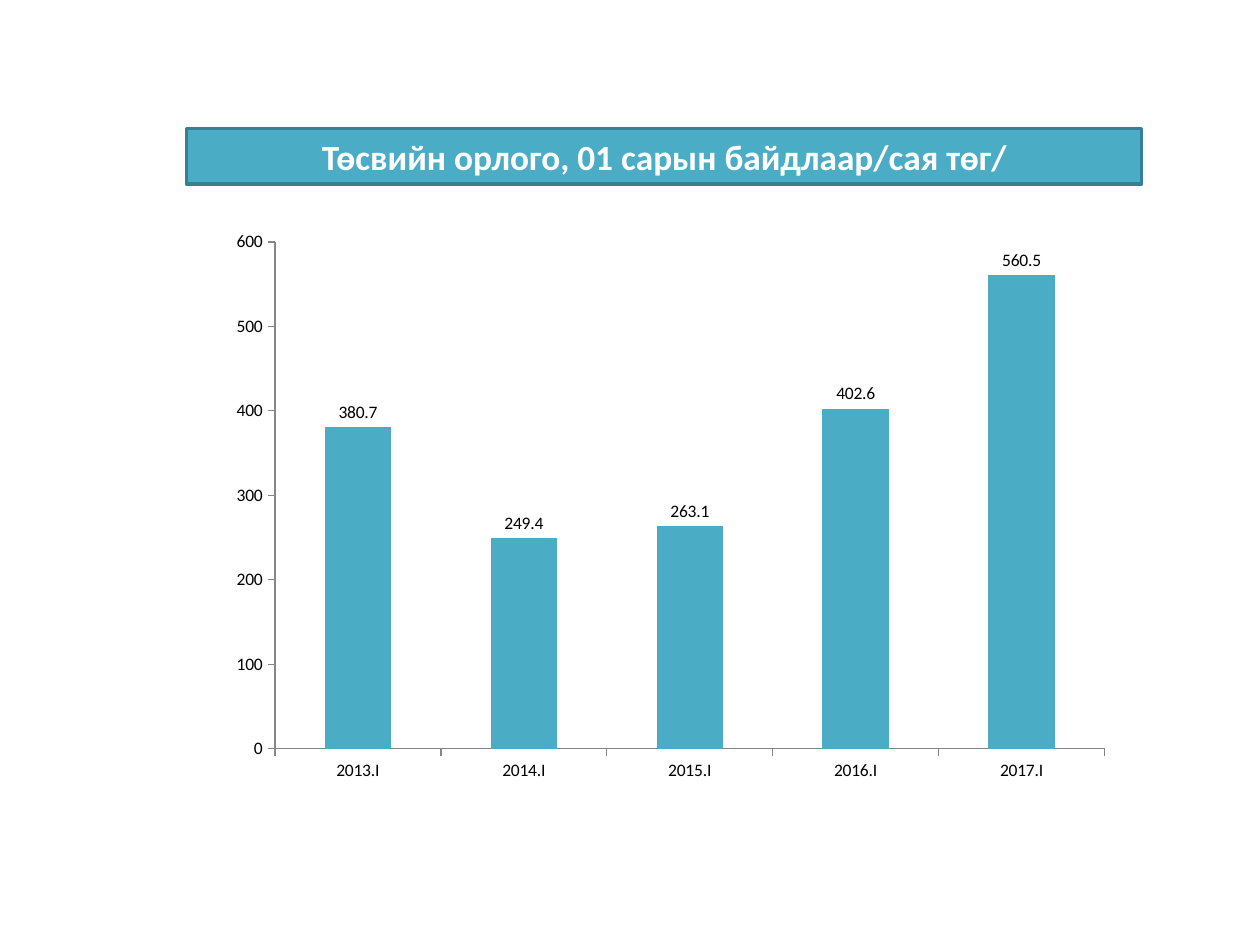
import pptx
import pptx.chart.data
import pptx.dml.color
import pptx.enum.chart
import pptx.enum.text
import pptx.oxml
import pptx.oxml.ns
import pptx.util
from pptx.dml.color import RGBColor
from pptx.util import Inches

TEAL = RGBColor(0x4B, 0xAC, 0xC6)
DARK_TEAL = RGBColor(0x37, 0x7F, 0x92)
WHITE = RGBColor(0xFF, 0xFF, 0xFF)
BLACK = RGBColor(0, 0, 0)
GREY = RGBColor(0x86, 0x86, 0x86)
FONT = "Calibri"

REVENUE = {
    "2013.I": 380.7,
    "2014.I": 249.4,
    "2015.I": 263.1,
    "2016.I": 402.6,
    "2017.I": 560.5,
}


def format_font(font, size, color, bold=False):
    font.name = FONT
    font.size = pptx.util.Pt(size)
    font.bold = bold
    font.color.rgb = color


def write_text(shape, text, size, color, bold=False, align=pptx.enum.text.PP_ALIGN.CENTER):
    frame = shape.text_frame
    frame.word_wrap = True
    frame.vertical_anchor = pptx.enum.text.MSO_ANCHOR.MIDDLE
    frame.auto_size = pptx.enum.text.MSO_AUTO_SIZE.NONE
    frame.margin_left = frame.margin_right = Inches(0.1)
    frame.margin_top = frame.margin_bottom = Inches(0.05)
    paragraph = frame.paragraphs[0]
    paragraph.alignment = align
    run = paragraph.add_run()
    run.text = text
    format_font(run.font, size, color, bold)


def add_title(slide, text):
    title = slide.shapes.title
    title.left, title.top = Inches(1.48), Inches(1.02)
    title.width, title.height = Inches(7.58), Inches(0.44)
    title.fill.solid()
    title.fill.fore_color.rgb = TEAL
    title.line.color.rgb = DARK_TEAL
    title.line.width = pptx.util.Pt(2)
    write_text(title, text, size=20.2, color=WHITE, bold=True)


def place_plot(chart, left, top, width, height):
    plot_area = chart.plots[0]._element.getparent()
    for layout in plot_area.findall(pptx.oxml.ns.qn("c:layout")):
        plot_area.remove(layout)
    sizes = "".join(
        f'<c:{name} val="{value}"/>'
        for name, value in (("x", left), ("y", top), ("w", width), ("h", height))
    )
    plot_area.insert(0, pptx.oxml.parse_xml(
        f'<c:layout {pptx.oxml.ns.nsdecls("c")}><c:manualLayout>'
        '<c:layoutTarget val="inner"/><c:xMode val="edge"/><c:yMode val="edge"/>'
        f"{sizes}</c:manualLayout></c:layout>"
    ))


def format_axis(axis):
    axis.has_major_gridlines = False
    axis.major_tick_mark = pptx.enum.chart.XL_TICK_MARK.OUTSIDE
    axis.minor_tick_mark = pptx.enum.chart.XL_TICK_MARK.NONE
    axis.format.line.color.rgb = GREY
    axis.format.line.width = pptx.util.Pt(0.75)
    format_font(axis.tick_labels.font, 10, BLACK)


def add_revenue_chart(slide):
    data = pptx.chart.data.CategoryChartData()
    data.categories = list(REVENUE)
    data.add_series("Series 1", list(REVENUE.values()))
    chart = slide.shapes.add_chart(
        pptx.enum.chart.XL_CHART_TYPE.COLUMN_CLUSTERED,
        Inches(1.54), Inches(1.78), Inches(7.56), Inches(5.04), data,
    ).chart
    chart.has_legend = False
    chart.has_title = False
    format_font(chart.font, 10, BLACK)
    place_plot(chart, 0.085, 0.028, 0.871, 0.798)

    format_axis(chart.category_axis)
    format_axis(chart.value_axis)
    chart.value_axis.minimum_scale = 0
    chart.value_axis.maximum_scale = 600
    chart.value_axis.major_unit = 100

    plot = chart.plots[0]
    plot.vary_by_categories = False
    plot.gap_width = 150
    fill = plot.series[0].format.fill
    fill.solid()
    fill.fore_color.rgb = TEAL
    labels = plot.series[0].data_labels
    labels.show_value = True
    labels.position = pptx.enum.chart.XL_LABEL_POSITION.OUTSIDE_END
    format_font(labels.font, 10, BLACK)


def main():
    presentation = pptx.Presentation()
    presentation.slide_width = Inches(10)
    presentation.slide_height = Inches(7.5)
    slide = presentation.slides.add_slide(presentation.slide_layouts[5])
    add_title(slide, "Төсвийн орлого, 01 сарын байдлаар/сая төг/")
    add_revenue_chart(slide)
    presentation.save("out.pptx")


if __name__ == "__main__":
    main()
